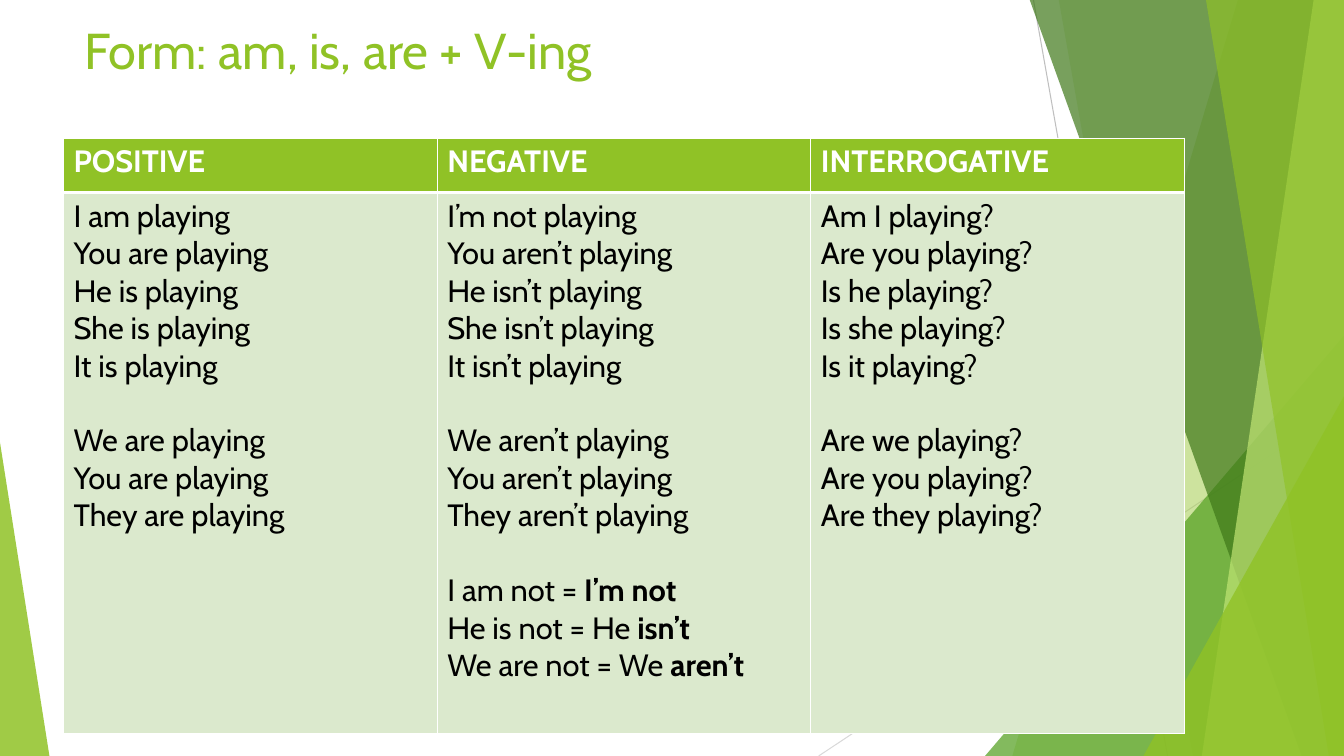
from lxml.etree import SubElement
from pptx import Presentation
from pptx.dml.color import RGBColor
from pptx.enum.shapes import MSO_CONNECTOR, MSO_SHAPE
from pptx.enum.text import MSO_ANCHOR, MSO_AUTO_SIZE, PP_ALIGN
from pptx.oxml.ns import qn
from pptx.util import Inches, Pt

FONT = "Cabin"
COLORS = {
    "lime": "90C226", "leaf": "54A021", "forest": "3F7819", "pale": "C0E474",
    "mint": "DBE9CD", "white": "FFFFFF", "black": "000000",
    "grey": "BFBFBF", "silver": "D9D9D9",
}
LINE_GAP = 26.7

FORMS = {
    "POSITIVE": [
        ["I am playing", "You are playing", "He is playing",
         "She is playing", "It is playing"],
        ["We are playing", "You are playing", "They are playing"],
    ],
    "NEGATIVE": [
        ["I’m not playing", "You aren’t playing", "He isn’t playing",
         "She isn’t playing", "It isn’t playing"],
        ["We aren’t playing", "You aren’t playing", "They aren’t playing"],
        ["I am not = **I’m not", "He is not = He **isn’t",
         "We are not = We **aren’t"],
    ],
    "INTERROGATIVE": [
        ["Am I playing?", "Are you playing?", "Is he playing?",
         "Is she playing?", "Is it playing?"],
        ["Are we playing?", "Are you playing?", "Are they playing?"],
    ],
}


def rgb(name):
    return RGBColor.from_string(COLORS[name])


def write(paragraph, text, size=22, color="black", bold=False, before=0):
    paragraph.alignment = PP_ALIGN.LEFT
    paragraph.space_before = Pt(before)
    for index, part in enumerate(text.split("**")):
        run = paragraph.add_run()
        run.text = part
        run.font.name = FONT
        run.font.size = Pt(size)
        run.font.bold = bold or index == 1
        run.font.color.rgb = rgb(color)


def paint(shape, color, opacity):
    shape.shadow.inherit = False
    shape.line.fill.background()
    shape.fill.solid()
    shape.fill.fore_color.rgb = rgb(color)
    tint = shape.fill._xPr.find(qn("a:solidFill"))[0]
    SubElement(tint, qn("a:alpha"), val=str(opacity * 1000))


def add_ray(slide, start, end, color):
    ray = slide.shapes.add_connector(
        MSO_CONNECTOR.STRAIGHT, *map(Inches, start + end))
    ray.line.color.rgb = rgb(color)
    ray.line.width = Pt(0.75)
    SubElement(ray._element.spPr, qn("a:effectLst"))


def add_band(slide, top_x, bottom_x, right, bottom, color, opacity):
    top = -0.01
    outline = slide.shapes.build_freeform(
        Inches(top_x), Inches(top), scale=1.0)
    corners = [(right, top), (right, bottom), (bottom_x, bottom)]
    outline.add_line_segments(
        [(Inches(x), Inches(y)) for x, y in corners], close=True)
    paint(outline.convert_to_shape(), color, opacity)


def add_corner(slide, left, width, height, bottom, apex, color, opacity):
    corner = slide.shapes.add_shape(
        MSO_SHAPE.ISOSCELES_TRIANGLE, Inches(left), Inches(bottom - height),
        Inches(width), Inches(height))
    corner.adjustments[0] = apex
    paint(corner, color, opacity)


def add_backdrop(slide, width, height):
    add_ray(slide, (10.25, 0), (11.58, height), "grey")
    add_ray(slide, (width, 4.03), (8.12, height), "silver")
    add_band(slide, 12.28, 10.04, width, height, "lime", 30)
    add_band(slide, 10.5, 11.83, width, height, "lime", 20)
    add_corner(slide, width - 3.56, 3.56, 4.17, height, 1, "leaf", 72)
    add_band(slide, 10.21, 12.91, width, height, "forest", 70)
    add_band(slide, 13.03, 11.92, width, height, "pale", 70)
    add_band(slide, 11.96, 13.18, width, height, "lime", 65)
    add_corner(slide, width - 1.99, 1.99, 3.57, height, 1, "lime", 80)
    add_corner(slide, 0, 0.49, 3.11, height, 0, "lime", 85)


def add_heading(slide, left, top, width, height):
    heading = slide.shapes.title
    heading.left, heading.top = Inches(left), Inches(top)
    heading.width, heading.height = Inches(width), Inches(height)
    frame = heading.text_frame
    frame.word_wrap = True
    frame.auto_size = MSO_AUTO_SIZE.NONE
    frame.vertical_anchor = MSO_ANCHOR.TOP
    write(frame.paragraphs[0], "Form: am, is, are + V-ing",
          size=36, color="lime")


def style_cell(cell, fill, top, bottom):
    properties = cell._tc.get_or_add_tcPr()
    for side, points in (("L", 1), ("R", 1), ("T", top), ("B", bottom)):
        border = SubElement(properties, qn(f"a:ln{side}"), w=str(Pt(points)))
        solid = SubElement(border, qn("a:solidFill"))
        SubElement(solid, qn("a:srgbClr"), val=COLORS["white"])
    cell.fill.solid()
    cell.fill.fore_color.rgb = rgb(fill)
    cell.vertical_anchor = MSO_ANCHOR.TOP


def add_forms_table(slide, left, top, width, height):
    header_height = 0.54
    table = slide.shapes.add_table(
        2, len(FORMS), Inches(left), Inches(top),
        Inches(width), Inches(height)).table
    table.horz_banding = False
    table.rows[0].height = Inches(header_height)
    table.rows[1].height = Inches(height - header_height)
    for column, (form, groups) in enumerate(FORMS.items()):
        header, body = table.cell(0, column), table.cell(1, column)
        style_cell(header, "lime", top=1, bottom=3)
        write(header.text_frame.paragraphs[0], form, color="white", bold=True)
        style_cell(body, "mint", top=3, bottom=1)
        frame = body.text_frame
        for group_index, sentences in enumerate(groups):
            for index, sentence in enumerate(sentences):
                is_first = group_index == 0 and index == 0
                opens_group = group_index > 0 and index == 0
                paragraph = (frame.paragraphs[0] if is_first
                             else frame.add_paragraph())
                write(paragraph, sentence,
                      before=LINE_GAP if opens_group else 0)


def main():
    width, height = 13.33, 7.5
    presentation = Presentation()
    presentation.slide_width = Inches(width)
    presentation.slide_height = Inches(height)
    slide = presentation.slides.add_slide(presentation.slide_layouts[5])
    add_backdrop(slide, width, height)
    add_heading(slide, 0.74, 0.14, 9.4, 0.87)
    add_forms_table(slide, 0.63, 1.37, 11.12, 5.91)
    presentation.save("out.pptx")


if __name__ == "__main__":
    main()
